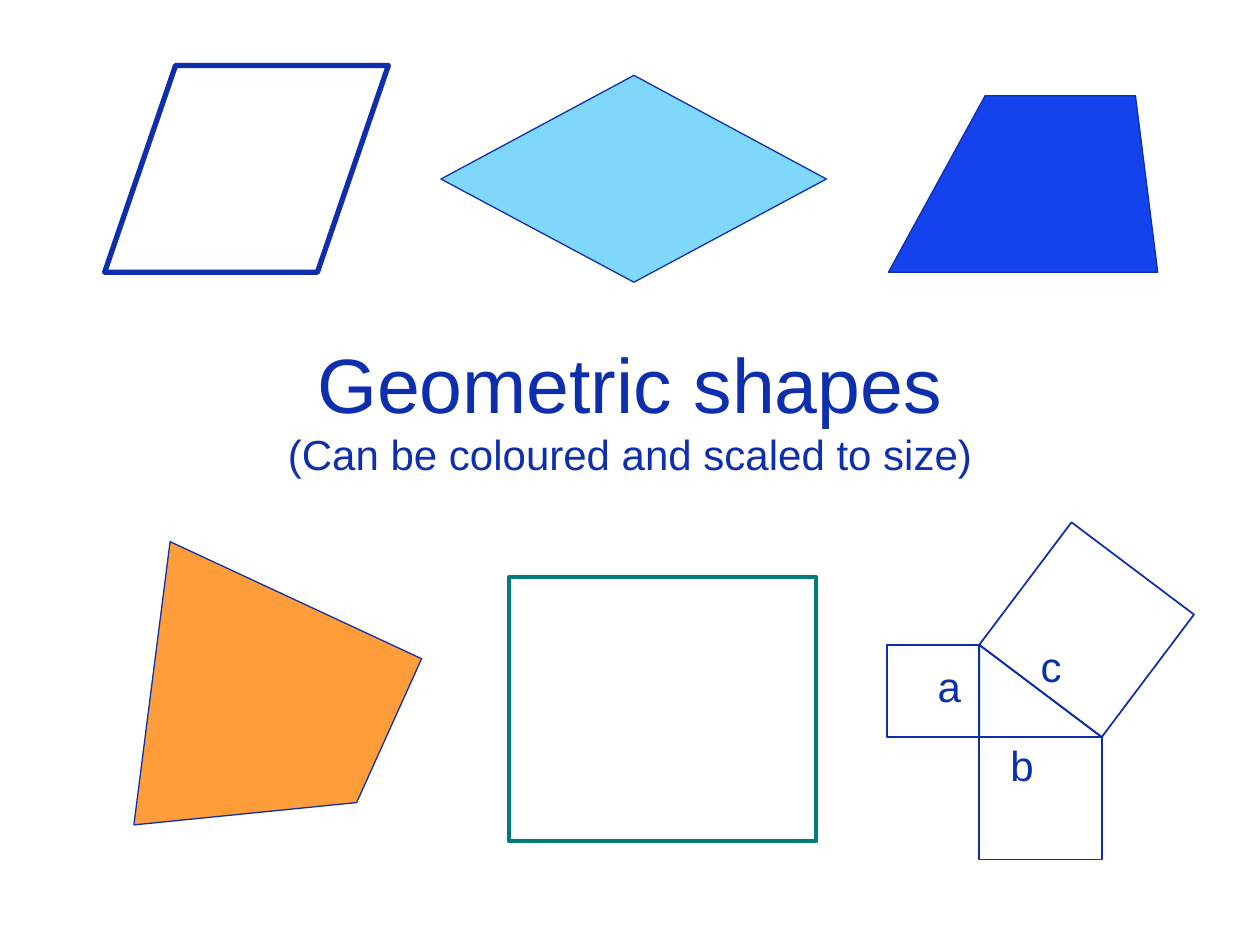
from dataclasses import dataclass
from math import atan2, degrees, hypot

from pptx import Presentation
from pptx.dml.color import RGBColor as Rgb
from pptx.enum.shapes import MSO_SHAPE as Kind
from pptx.enum.text import MSO_ANCHOR as Anchor, MSO_AUTO_SIZE as Fit, PP_ALIGN as Align
from pptx.util import Cm, Pt


@dataclass(frozen=True)
class Theme:
    font: str = "Arial"
    ink: str = "0E2FAD"
    sky: str = "7FD7FC"
    blue: str = "1442EC"
    orange: str = "FF9D3B"
    teal: str = "007B7E"
    head: int = 44
    note: int = 24
    hair: float = 0.75
    thin: float = 1
    mid: float = 2.25
    bold: float = 3


class Page:
    """Holds the theme and the slide being drawn; all lengths are in cm."""

    def __init__(self, slide, theme):
        self.slide = slide
        self.theme = theme

    def style(self, shape, line, width, fill=None):
        shape.shadow.inherit = False
        shape.line.color.rgb = Rgb.from_string(line)
        shape.line.width = Pt(width)
        if fill:
            shape.fill.solid()
            shape.fill.fore_color.rgb = Rgb.from_string(fill)
        else:
            shape.fill.background()
        return shape

    def font(self, para):
        para.font.name = self.theme.font
        para.font.color.rgb = Rgb.from_string(self.theme.ink)

    def title(self, box, head, note):
        shape = self.slide.shapes.title
        shape.left, shape.top, shape.width, shape.height = map(Cm, box)
        frame = shape.text_frame
        frame.auto_size = Fit.NONE
        frame.vertical_anchor = Anchor.MIDDLE
        para = frame.paragraphs[0]
        para.alignment = Align.CENTER
        self.font(para)
        first = para.add_run()
        first.text = head
        first.font.size = Pt(self.theme.head)
        para.add_line_break()
        second = para.add_run()
        second.text = note
        second.font.size = Pt(self.theme.note)

    def preset(self, kind, box, line, width):
        shape = self.slide.shapes.add_shape(kind, *map(Cm, box))
        return self.style(shape, line, width)

    def polygon(self, points, fill):
        start, *rest = [(Cm(x), Cm(y)) for x, y in points]
        path = self.slide.shapes.build_freeform(*start)
        path.add_line_segments(rest, close=True)
        self.style(path.convert_to_shape(), self.theme.ink, self.theme.hair, fill)

    def label(self, text, x, y):
        box = self.slide.shapes.add_textbox(Cm(x), Cm(y), Cm(0.53), Cm(0.64))
        frame = box.text_frame
        frame.margin_left = frame.margin_right = 0
        frame.margin_top = frame.margin_bottom = 0
        frame.word_wrap = False
        frame.vertical_anchor = Anchor.MIDDLE
        para = frame.paragraphs[0]
        para.text = text
        self.font(para)
        para.font.size = Pt(self.theme.note)

    def theorem(self, x, y, a, b):
        """Draws a right triangle with its corner at x, y and a square on each side."""
        ink, thin = self.theme.ink, self.theme.thin
        c = hypot(a, b)
        left = x + (a + b - c) / 2
        top = y - (a + b + c) / 2
        square = self.preset(Kind.RECTANGLE, (left, top, c, c), ink, thin)
        square.rotation = degrees(atan2(a, b))
        self.preset(Kind.RECTANGLE, (x, y, b, b), ink, thin)
        self.preset(Kind.RECTANGLE, (x - a, y - a, a, a), ink, thin)
        self.label("a", x - 0.84, y - 1.35)
        self.label("c", x + 1.24, y - 1.75)
        self.label("b", x + 0.63, y + 0.23)
        self.preset(Kind.RIGHT_TRIANGLE, (x, y - a, b, a), ink, thin)


def main():
    deck = Presentation()
    deck.slide_width, deck.slide_height = Cm(25.4), Cm(19.05)
    theme = Theme()
    page = Page(deck.slides.add_slide(deck.slide_layouts[5]), theme)

    page.title((1.9, 6.17, 21.6, 4.09), "Geometric shapes",
               "(Can be coloured and scaled to size)")

    slant = page.preset(Kind.PARALLELOGRAM, (2.11, 1.32, 5.72, 4.17),
                        theme.ink, theme.bold)
    slant.adjustments[0] = 0.343

    rhombus = [(8.89, 3.61), (12.78, 1.52), (16.66, 3.61), (12.78, 5.69)]
    trapezium = [(17.91, 5.49), (23.34, 5.49), (22.89, 1.93), (19.86, 1.93)]
    irregular = [(2.7, 16.63), (7.19, 16.18), (8.5, 13.28), (3.43, 10.92)]
    page.polygon(rhombus, theme.sky)
    page.polygon(trapezium, theme.blue)
    page.polygon(irregular, theme.orange)

    page.preset(Kind.RECTANGLE, (10.26, 11.63, 6.2, 5.33), theme.teal, theme.mid)
    page.theorem(19.74, 14.86, 1.86, 2.47)

    deck.save("out.pptx")


if __name__ == "__main__":
    main()
